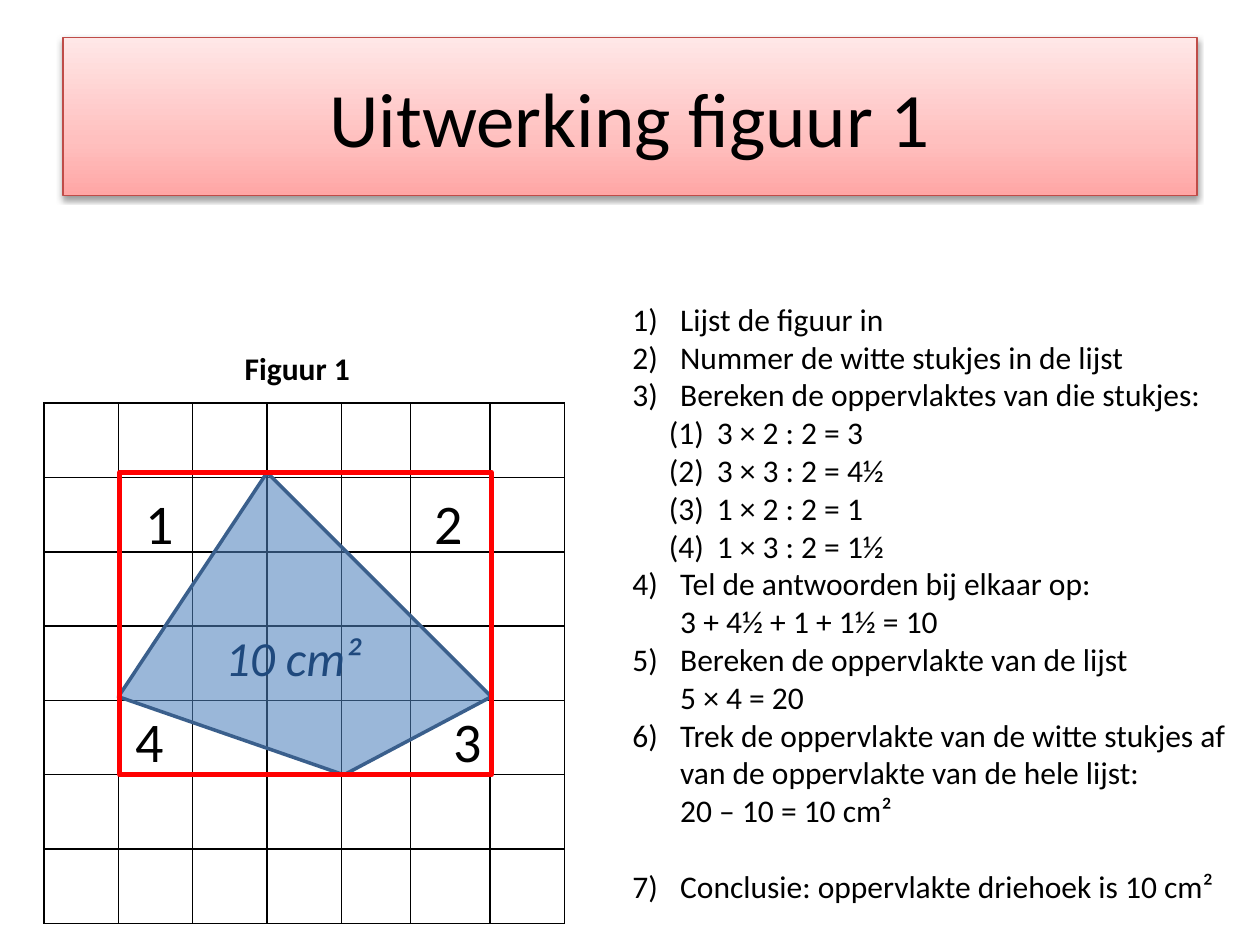
"""Build the slide that works out the area of figure 1 on a squared grid."""
from copy import deepcopy

from lxml import etree
from pptx import Presentation
from pptx.dml.color import RGBColor
from pptx.enum.shapes import MSO_SHAPE
from pptx.enum.text import MSO_ANCHOR, PP_ALIGN
from pptx.oxml import parse_xml
from pptx.oxml.ns import nsdecls, qn
from pptx.util import Inches, Pt

RECTANGLE = MSO_SHAPE.RECTANGLE
MIDDLE = MSO_ANCHOR.MIDDLE
CENTER, LEFT = PP_ALIGN.CENTER, PP_ALIGN.LEFT

BLACK = RGBColor(0x00, 0x00, 0x00)
RED = RGBColor(0xFF, 0x00, 0x00)
NAVY = RGBColor(0x1F, 0x49, 0x7D)
KITE_BLUE = RGBColor(0x4F, 0x81, 0xBD)
KITE_EDGE = RGBColor(0x3A, 0x5F, 0x8C)
TITLE_EDGE = RGBColor(0xBF, 0x4C, 0x48)
TITLE_STOPS = [
    (0, RGBColor(0xFF, 0xA6, 0xA5)),
    (0.35, RGBColor(0xFF, 0xC0, 0xBF)),
    (1, RGBColor(0xFF, 0xE7, 0xE7)),
]

FONT = "Calibri"
CELL = 0.59
COLUMNS = [CELL] * 4 + [0.55, 0.63, CELL]
ROW_COUNT = 7
GRID_LEFT, GRID_TOP = 0.35, 3.2
KITE = [(0.94, 5.53), (2.12, 3.75), (3.9, 5.53), (2.73, 6.15)]
LABELS = [("1", 1.06, 3.83), ("2", 3.35, 3.83), ("3", 3.5, 5.56), ("4", 0.98, 5.56)]
STEPS = [
    (1, "Lijst de figuur in"),
    (1, "Nummer de witte stukjes in de lijst"),
    (1, "Bereken de oppervlaktes van die stukjes:"),
    (None, "(1)\t3 × 2 : 2 = 3"),
    (None, "(2)\t3 × 3 : 2 = 4½"),
    (None, "(3)\t1 × 2 : 2 = 1"),
    (None, "(4)\t1 × 3 : 2 = 1½"),
    (4, "Tel de antwoorden bij elkaar op:\n3 + 4½ + 1 + 1½ = 10"),
    (4, "Bereken de oppervlakte van de lijst\n5 × 4 = 20"),
    (4, "Trek de oppervlakte van de witte stukjes af van de oppervlakte "
        "van de hele lijst:\n20 – 10 = 10 cm²"),
    (4, "Conclusie: oppervlakte driehoek is 10 cm²"),
]


def style_text(frame, size, color=BLACK, align=LEFT, bold=False, italic=False):
    for para in frame.paragraphs:
        para.alignment = align
        for span in para.runs:
            span.font.name = FONT
            span.font.size = Pt(size)
            span.font.color.rgb = color
            span.font.bold = bold
            span.font.italic = italic


def add_text(page, left, top, width, height, lines):
    box = page.shapes.add_textbox(Inches(left), Inches(top), Inches(width), Inches(height))
    frame = box.text_frame
    frame.word_wrap = True
    frame.text = lines[0]
    for line in lines[1:]:
        frame.add_paragraph().text = line
    return frame


deck = Presentation()
deck.slide_width, deck.slide_height = Inches(10), Inches(7.5)
page = deck.slides.add_slide(deck.slide_layouts[5])

title = page.shapes.title
title.left, title.top = Inches(0.5), Inches(0.3)
title.width, title.height = Inches(9), Inches(1.25)
title.text_frame.text = "Uitwerking figuur 1"
title.text_frame.vertical_anchor = MIDDLE
style_text(title.text_frame, 44, align=CENTER)
title.fill.gradient()
title.fill.gradient_angle = 90
stop_list = title.element.spPr.find(".//" + qn("a:gsLst"))
stop_list.append(deepcopy(stop_list[-1]))
for stop, (position, color) in zip(title.fill.gradient_stops, TITLE_STOPS):
    stop.position = position
    stop.color.rgb = color
title.line.color.rgb = TITLE_EDGE
title.line.width = Pt(0.75)
title.shadow.inherit = False
title.element.spPr.find(qn("a:effectLst")).append(parse_xml(
    f'<a:outerShdw {nsdecls("a")} blurRad="{Pt(3.1)}" dist="{Pt(1.6)}" dir="5400000" '
    'rotWithShape="0"><a:srgbClr val="000000"><a:alpha val="38000"/></a:srgbClr></a:outerShdw>'))

grid = page.shapes.add_table(
    ROW_COUNT, len(COLUMNS), Inches(GRID_LEFT), Inches(GRID_TOP),
    Inches(sum(COLUMNS)), Inches(CELL * ROW_COUNT)).table
grid.first_row = grid.horz_banding = False
for column, width in zip(grid.columns, COLUMNS):
    column.width = Inches(width)
for row in grid.rows:
    row.height = Inches(CELL)
for cell in grid.iter_cells():
    properties = cell._tc.get_or_add_tcPr()
    for side in ("lnL", "lnR", "lnT", "lnB"):
        properties.append(parse_xml(
            f'<a:{side} {nsdecls("a")} w="{Pt(1)}"><a:solidFill>'
            f'<a:srgbClr val="{BLACK}"/></a:solidFill></a:{side}>'))
    cell.fill.background()

corners = [(Inches(x), Inches(y)) for x, y in KITE]
builder = page.shapes.build_freeform(*corners[0])
builder.add_line_segments(corners[1:], close=True)
kite = builder.convert_to_shape()
kite.shadow.inherit = False
kite.fill.solid()
kite.fill.fore_color.rgb = KITE_BLUE
etree.SubElement(kite.element.spPr.find(".//" + qn("a:srgbClr")), qn("a:alpha"), val="57000")
kite.line.color.rgb = KITE_EDGE
kite.line.width = Pt(2)

caption = add_text(page, 0.98, 2.72, 2.76, 0.4, ["Figuur 1"])
style_text(caption, 18, align=CENTER, bold=True)

steps = add_text(page, 4.92, 2.33, 5.08, 5.25, [line for start, line in STEPS])
style_text(steps, 18)
for para, (start, line) in zip(steps.paragraphs, STEPS):
    properties = para._p.get_or_add_pPr()
    properties.set("marL", str(Inches(0.38 if start else 0.67)))
    properties.set("indent", str(-Inches(0.38)))
    if start:
        bullet = etree.SubElement(properties, qn("a:buAutoNum"), type="arabicParenR")
        if start > 1:
            bullet.set("startAt", str(start))
steps.paragraphs[-1].space_before = Pt(22)

border = page.shapes.add_shape(RECTANGLE, Inches(0.95), Inches(3.75), Inches(2.95), Inches(2.4))
border.shadow.inherit = False
border.fill.background()
border.line.color.rgb = RED
border.line.width = Pt(3)

for label, left, top in LABELS:
    style_text(add_text(page, left, top, 0.55, 0.64, [label]), 32)

area = add_text(page, 1.69, 4.93, 1.89, 0.57, ["10 cm²"])
style_text(area, 28, color=NAVY, italic=True)

deck.save("out.pptx")
